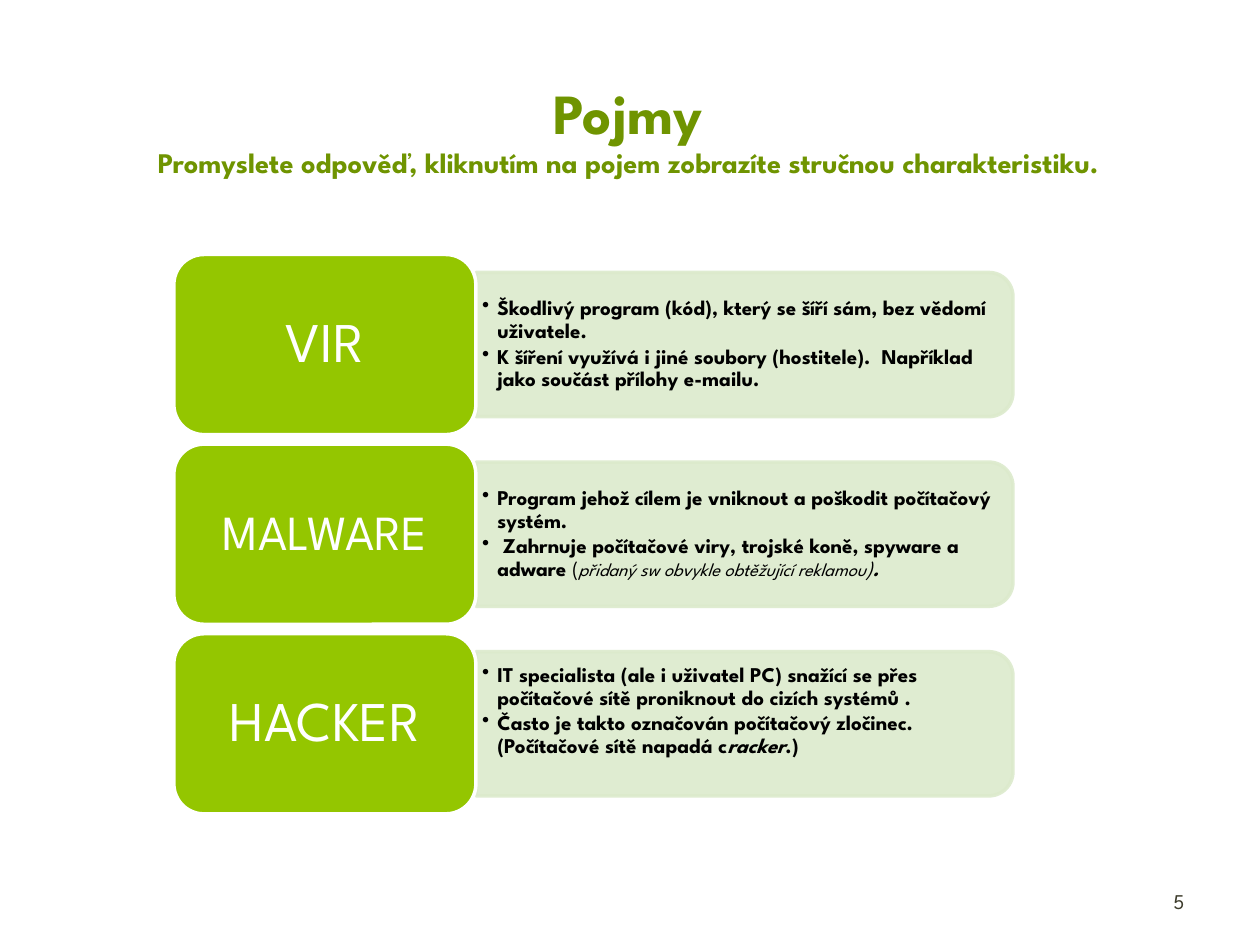
import math

from lxml import etree
from pptx import Presentation
from pptx.dml.color import RGBColor
from pptx.enum.shapes import MSO_SHAPE
from pptx.enum.text import MSO_ANCHOR, MSO_AUTO_SIZE, PP_ALIGN
from pptx.oxml.ns import qn
from pptx.util import Inches, Pt

ROUND_RECT = MSO_SHAPE.ROUNDED_RECTANGLE
MIDDLE = MSO_ANCHOR.MIDDLE
NO_FIT = MSO_AUTO_SIZE.NONE
LEFT, CENTER, RIGHT = PP_ALIGN.LEFT, PP_ALIGN.CENTER, PP_ALIGN.RIGHT

FONT = "League Spartan"
OLIVE = RGBColor(0x6F, 0x94, 0x00)
LIME = RGBColor(0x94, 0xC6, 0x00)
PALE = RGBColor(0xDC, 0xEA, 0xCC)
GREY = RGBColor(0x3E, 0x3D, 0x2D)
WHITE = RGBColor(0xFF, 0xFF, 0xFF)
BLACK = RGBColor(0, 0, 0)

LIST_LEFT, LIST_TOP, LIST_WIDTH = 1.38, 2.02, 6.66
ROW_HEIGHT, ROW_PITCH = 1.43, 1.505
LABEL_SHARE, PANEL_SHARE = 0.36, 0.8

BOLD, PLAIN, ITALIC, BOLD_ITALIC = (True, False), (False, False), (False, True), (True, True)

# Each term: label, label size, lines below the text, bullets as runs (text, style, size)
TERMS = [
    ("VIR", 32, 0, [
        [("Škodlivý program (kód), který se šíří sám, bez vědomí uživatele.", BOLD, 12)],
        [("K šíření využívá i jiné soubory (hostitele).  Například jako součást "
          "přílohy e-mailu.", BOLD, 12)],
    ]),
    ("MALWARE", 28, 0, [
        [("Program jehož cílem je vniknout a poškodit počítačový systém.", BOLD, 12)],
        [(" Zahrnuje počítačové viry, trojské koně, spyware a adware ", BOLD, 12),
         ("(", PLAIN, 12),
         ("přidaný sw obvykle obtěžující reklamou", ITALIC, 10.5),
         (")", ITALIC, 12),
         (".", BOLD_ITALIC, 12)],
    ]),
    ("HACKER", 32, 1, [
        [("IT specialista (ale i uživatel PC) snažící se přes počítačové sítě "
          "proniknout do cizích systémů .", BOLD, 12)],
        [("Často je takto označován počítačový zločinec. (Počítačové sítě napadá c",
          BOLD, 12),
         ("racker", BOLD_ITALIC, 12),
         (".)", BOLD, 12)],
    ]),
]


def add_run(p, text, size, color, style=PLAIN):
    r = p.add_run()
    r.text = text
    r.font.name, r.font.size = FONT, Pt(size)
    r.font.bold, r.font.italic = style
    r.font.color.rgb = color


def set_frame(sp, left, top, right, bottom):
    tf = sp.text_frame
    tf.word_wrap, tf.auto_size, tf.vertical_anchor = True, NO_FIT, MIDDLE
    tf.margin_left, tf.margin_top = Inches(left), Inches(top)
    tf.margin_right, tf.margin_bottom = Inches(right), Inches(bottom)
    return tf


def paint(sp, fill, line):
    sp.shadow.inherit = False
    sp.fill.solid()
    sp.fill.fore_color.rgb = fill
    sp.line.color.rgb = line
    sp.line.width = Pt(2)


def set_bullet(p, indent):
    pPr = p._p.get_or_add_pPr()
    pPr.set("marL", str(Inches(indent)))
    pPr.set("indent", str(-Inches(indent)))
    etree.SubElement(pPr, qn("a:buChar")).set("char", "•")


def add_title(slide, left, top, width, height):
    sp = slide.shapes.title
    sp.left, sp.top, sp.width, sp.height = map(Inches, (left, top, width, height))
    p = set_frame(sp, 0.1, 0.05, 0.1, 0.05).paragraphs[0]
    p.alignment = CENTER
    add_run(p, "Pojmy", 32.4, OLIVE, BOLD)
    p.add_line_break()
    add_run(p, "Promyslete odpověď, kliknutím na pojem zobrazíte stručnou charakteristiku.",
            16.2, OLIVE, BOLD)


def add_panel(slide, left, top, width, height, bullets, spare_lines):
    """Box with only its right corners rounded, holding a bulleted list."""
    radius = height / 6
    right, bottom = left + width, top + height
    angles = [math.radians(a) for a in range(0, 91, 5)]
    upper = [(right - radius + radius * math.sin(a), top + radius - radius * math.cos(a))
             for a in angles]
    lower = [(x, top + bottom - y) for x, y in reversed(upper)]
    fb = slide.shapes.build_freeform(Inches(left), Inches(top))
    fb.add_line_segments([(Inches(x), Inches(y))
                          for x, y in upper + lower + [(left, bottom)]])
    sp = fb.convert_to_shape()
    paint(sp, PALE, PALE)
    for clr in sp._element.spPr.iter(qn("a:srgbClr")):
        etree.SubElement(clr, qn("a:alpha")).set("val", "90000")

    tf = set_frame(sp, 0.05, 0.08, 0.11, 0.08 + 0.2 * spare_lines)
    for i, runs in enumerate(bullets):
        p = tf.add_paragraph() if i else tf.paragraphs[0]
        p.alignment, p.line_spacing, p.space_after = LEFT, 0.9, Pt(1.8)
        set_bullet(p, 0.12)
        for text, style, size in runs:
            add_run(p, text, size, BLACK, style)


def add_label(slide, left, top, width, height, text, size):
    sp = slide.shapes.add_shape(ROUND_RECT, *map(Inches, (left, top, width, height)))
    sp.adjustments[0] = 1 / 6
    paint(sp, LIME, WHITE)
    p = set_frame(sp, 0.2, 0.14, 0.2, 0.14).paragraphs[0]
    p.alignment, p.line_spacing = CENTER, 0.9
    add_run(p, text, size, WHITE)


def add_term(slide, left, top, width, height, term):
    label, size, spare_lines, bullets = term
    label_width = width * LABEL_SHARE
    panel_height = height * PANEL_SHARE
    add_panel(slide, left + label_width, top + (height - panel_height) / 2,
              width - label_width, panel_height, bullets, spare_lines)
    add_label(slide, left, top, label_width, height, label, size)


def add_page_number(slide, left, top, width, height):
    sp = slide.shapes.add_textbox(*map(Inches, (left, top, width, height)))
    p = set_frame(sp, 0.1, 0.05, 0.1, 0.05).paragraphs[0]
    p.alignment = RIGHT
    add_run(p, "5", 12, GREY)


def main():
    prs = Presentation()
    prs.slide_width, prs.slide_height = Inches(10), Inches(7.5)
    slide = prs.slides.add_slide(prs.slide_layouts[5])
    add_title(slide, 0.47, 0.45, 9.03, 1.14)
    add_page_number(slide, 7.17, 6.95, 2.33, 0.4)
    for row, term in enumerate(TERMS):
        add_term(slide, LIST_LEFT, LIST_TOP + row * ROW_PITCH, LIST_WIDTH, ROW_HEIGHT, term)
    prs.save("out.pptx")


if __name__ == "__main__":
    main()
